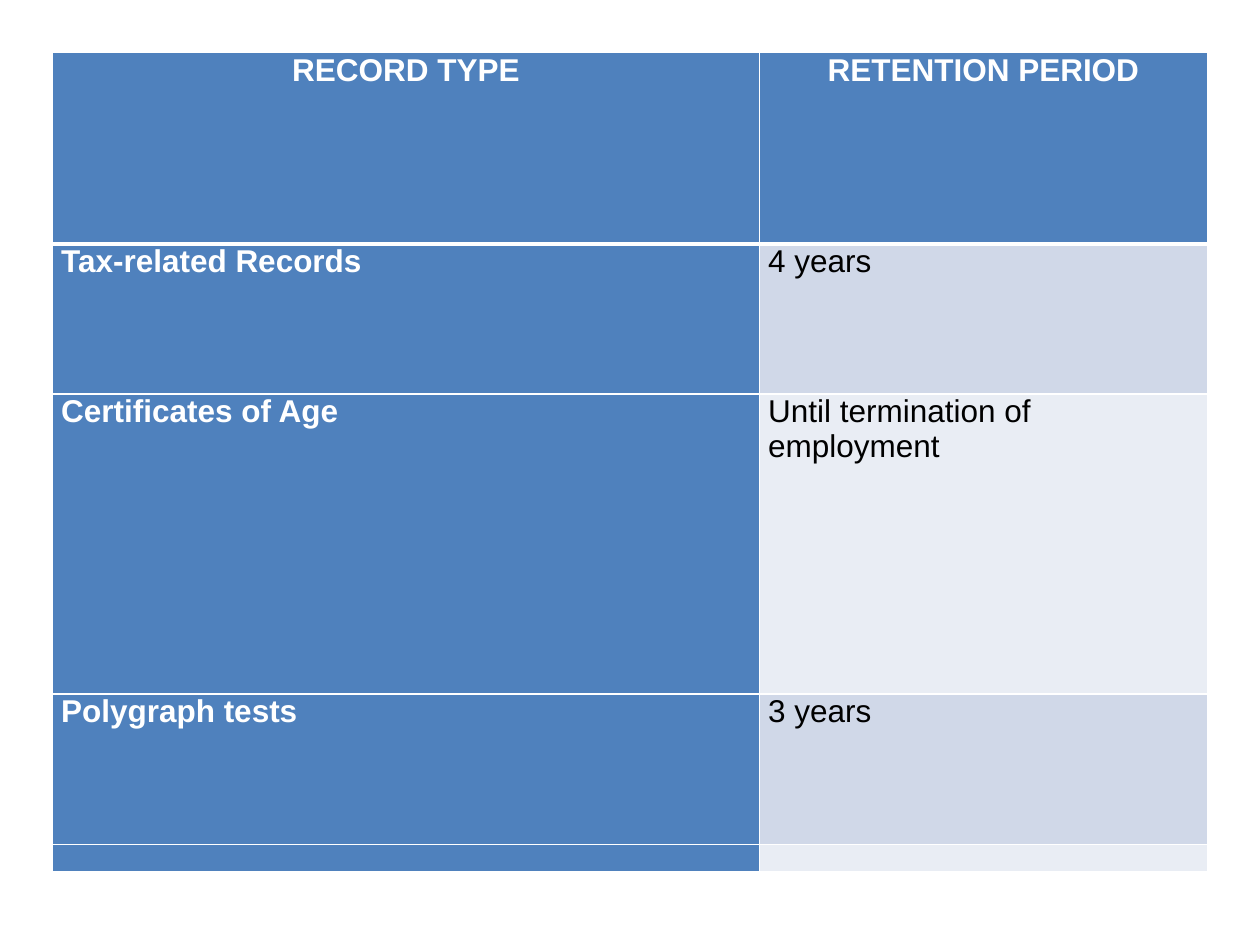
from lxml.etree import SubElement
from pptx import Presentation
from pptx.dml.color import RGBColor
from pptx.enum.text import PP_ALIGN
from pptx.oxml.ns import qn
from pptx.util import Pt

WHITE = RGBColor(0xFF, 0xFF, 0xFF)
BLACK = RGBColor(0x00, 0x00, 0x00)
BLUE = RGBColor(0x4F, 0x81, 0xBD)
BANDS = [RGBColor(0xE9, 0xED, 0xF4), RGBColor(0xD0, 0xD8, 0xE8)]

COL_WIDTHS = [404, 256]
ROW_HEIGHTS = [109.5, 85.75, 171.5, 85.75, 15.5]
RECORDS = [
    ("RECORD TYPE", "RETENTION PERIOD"),
    ("Tax-related Records", "4 years"),
    ("Certificates of Age", "Until termination of employment"),
    ("Polygraph tests", "3 years"),
    ("", ""),
]


def set_borders(cell, top=1, bottom=1):
    """Draw white lines on the four sides; widths in points."""
    tcPr = cell._tc.get_or_add_tcPr()
    for side, width in (("L", 1), ("R", 1), ("T", top), ("B", bottom)):
        ln = SubElement(tcPr, qn(f"a:ln{side}"), w=str(Pt(width)))
        fill = SubElement(ln, qn("a:solidFill"))
        SubElement(fill, qn("a:srgbClr"), val=str(WHITE))


def set_text(cell, text, color, bold, align):
    cell.margin_left = cell.margin_right = Pt(5)
    cell.margin_top = cell.margin_bottom = 0
    cell.text_frame.text = text
    p = cell.text_frame.paragraphs[0]
    p.alignment = align
    if not text:
        # Small end mark keeps the empty row low
        SubElement(p._p, qn("a:endParaRPr"), sz="1000")
    for r in p.runs:
        r.font.name = "Arial"
        r.font.size = Pt(18)
        r.font.bold = bold
        r.font.color.rgb = color


def add_retention_table(slide):
    sp = slide.shapes.add_table(
        len(RECORDS), len(COL_WIDTHS), Pt(30), Pt(30),
        Pt(sum(COL_WIDTHS)), Pt(sum(ROW_HEIGHTS)))
    table = sp.table
    table.first_col = True
    for column, width in zip(table.columns, COL_WIDTHS):
        column.width = Pt(width)
    for row, height in zip(table.rows, ROW_HEIGHTS):
        row.height = Pt(height)

    for i, record in enumerate(RECORDS):
        for j, text in enumerate(record):
            cell = table.cell(i, j)
            is_heading = i == 0 or j == 0
            set_borders(cell, top=3 if i == 1 else 1, bottom=3 if i == 0 else 1)
            cell.fill.solid()
            cell.fill.fore_color.rgb = BLUE if is_heading else BANDS[i % 2]
            set_text(cell, text, WHITE if is_heading else BLACK, is_heading,
                     PP_ALIGN.CENTER if i == 0 else PP_ALIGN.LEFT)


def main():
    prs = Presentation()
    prs.slide_width, prs.slide_height = Pt(720), Pt(540)
    # Blank layout: the table fills the slide
    slide = prs.slides.add_slide(prs.slide_layouts[6])
    add_retention_table(slide)
    prs.save("out.pptx")


if __name__ == "__main__":
    main()
